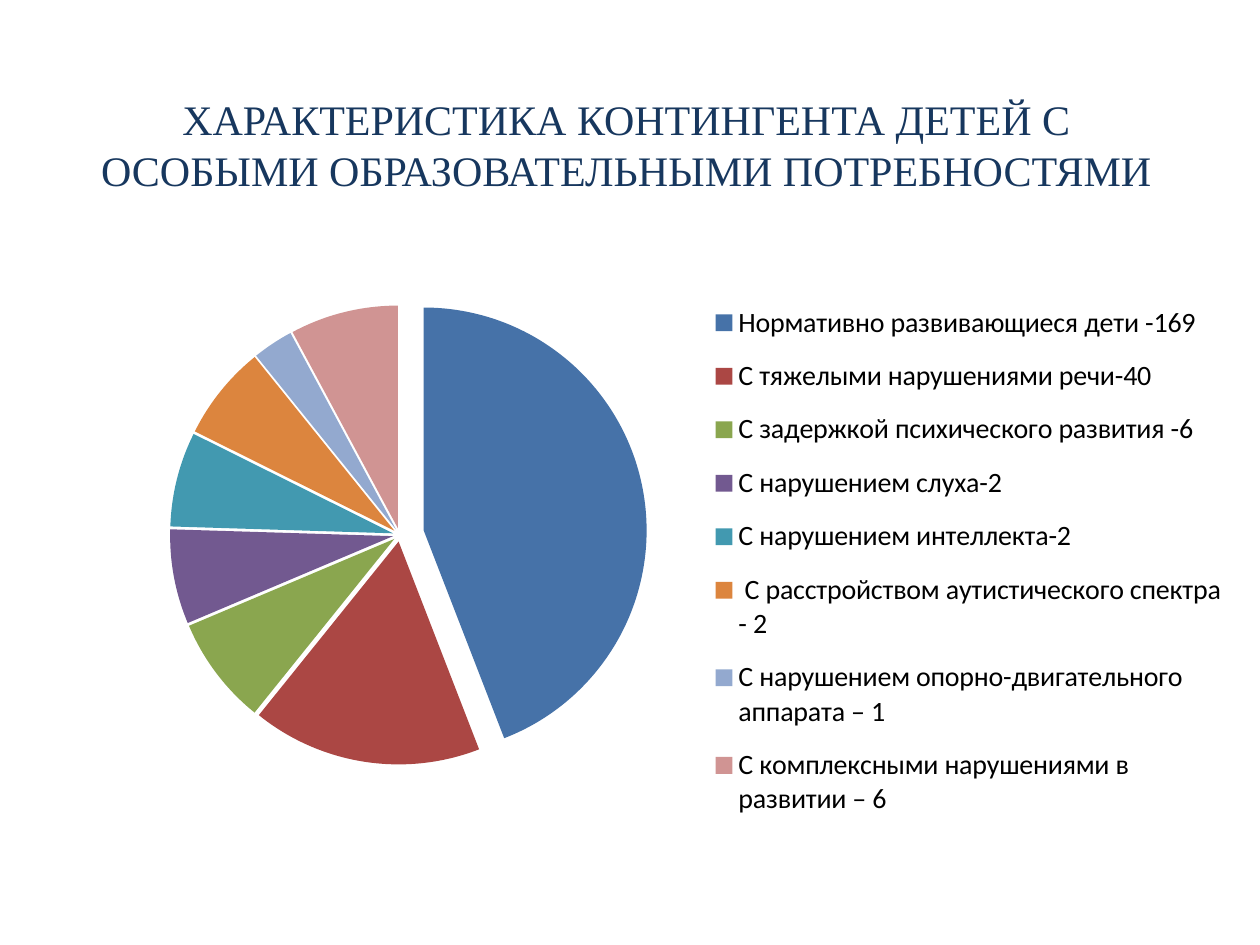
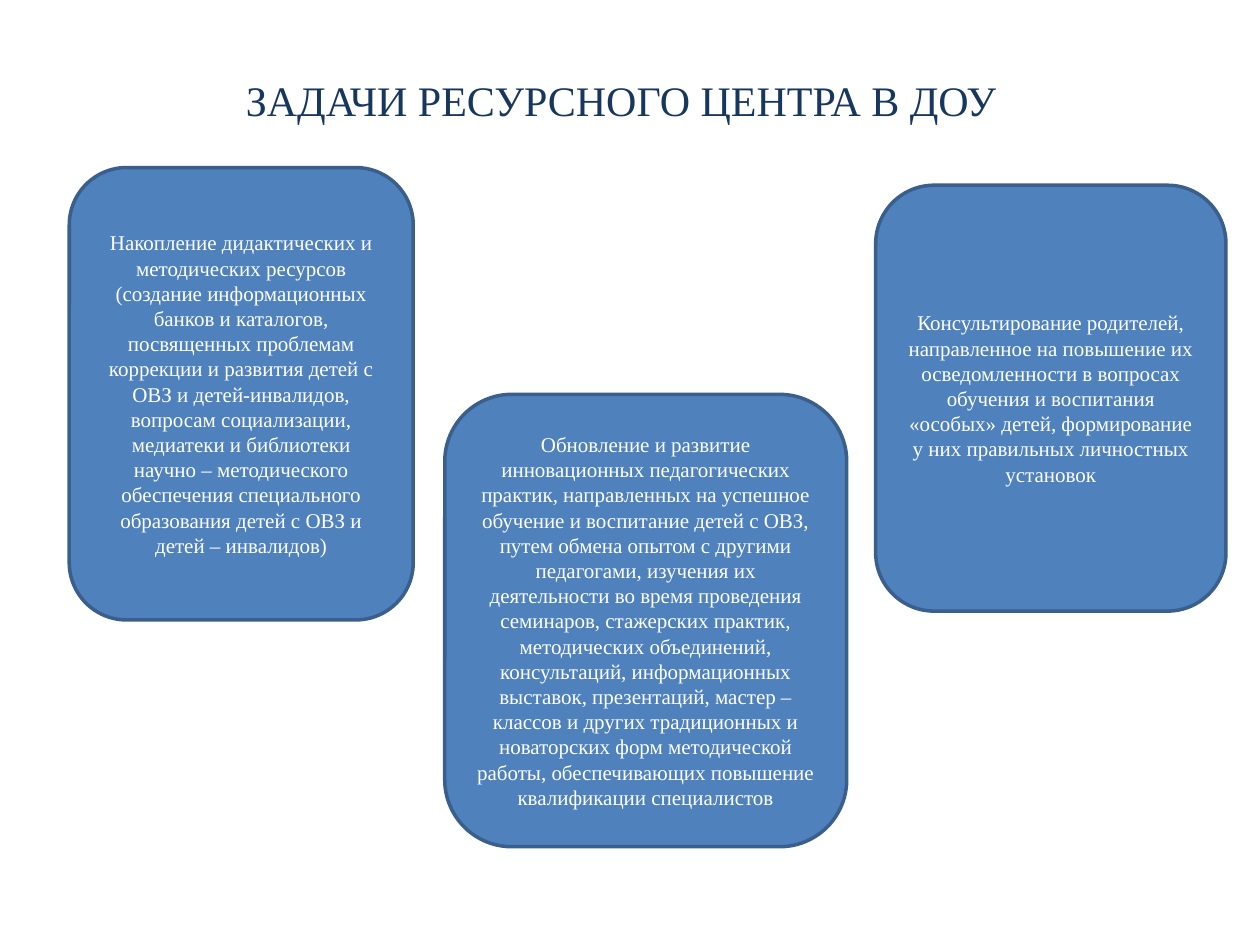
from lxml import etree
from pptx import Presentation
from pptx.chart.data import CategoryChartData
from pptx.dml.color import RGBColor
from pptx.enum.chart import XL_CHART_TYPE, XL_LEGEND_POSITION
from pptx.enum.shapes import MSO_SHAPE
from pptx.enum.text import MSO_ANCHOR, MSO_AUTO_SIZE, PP_ALIGN
from pptx.oxml import parse_xml
from pptx.oxml.ns import nsdecls, qn
from pptx.util import Inches, Pt

# Shared style
NAVY = RGBColor(0x17, 0x37, 0x5E)
BLUE = RGBColor(0x4F, 0x81, 0xBD)
DARK_BLUE = RGBColor(0x3A, 0x5F, 0x8C)
WHITE = RGBColor(0xFF, 0xFF, 0xFF)
BLACK = RGBColor(0x00, 0x00, 0x00)
SERIF = "Times New Roman"

presentation = Presentation()
presentation.slide_width = Inches(10)
presentation.slide_height = Inches(7.5)


def write_centred(shape, text, size, color):
    frame = shape.text_frame
    frame.word_wrap = True
    frame.auto_size = MSO_AUTO_SIZE.NONE
    frame.vertical_anchor = MSO_ANCHOR.MIDDLE
    paragraph = frame.paragraphs[0]
    paragraph.alignment = PP_ALIGN.CENTER
    run = paragraph.add_run()
    run.text = text
    run.font.name = SERIF
    run.font.size = Pt(size)
    run.font.color.rgb = color


def add_titled_slide(text, left, top):
    slide = presentation.slides.add_slide(presentation.slide_layouts[5])
    title = slide.shapes.title
    title.left, title.top = Inches(left), Inches(top)
    title.width, title.height = Inches(9), Inches(1.25)
    write_centred(title, text, 24, NAVY)
    title.text_frame.margin_bottom = Inches(0.25)
    return slide


# Slide 1: pie chart of the children
slide = add_titled_slide(
    "ХАРАКТЕРИСТИКА КОНТИНГЕНТА ДЕТЕЙ С ОСОБЫМИ ОБРАЗОВАТЕЛЬНЫМИ ПОТРЕБНОСТЯМИ", 0.47, 0.62)

groups = [
    ("Нормативно развивающиеся дети -169", 45, "4672A8"),
    ("С тяжелыми нарушениями речи-40", 17, "AB4744"),
    ("С задержкой психического развития -6", 8, "8AA64F"),
    ("С нарушением слуха-2", 7, "725990"),
    ("С нарушением интеллекта-2", 7, "4299B0"),
    (" С расстройством аутистического спектра - 2", 7, "DC853E"),
    ("С нарушением опорно-двигательного аппарата – 1", 3, "93A9CF"),
    ("С комплексными нарушениями в развитии – 6", 8, "D09493"),
]
chart_data = CategoryChartData()
chart_data.categories = [name for name, value, color in groups]
chart_data.add_series("Series 1", [value for name, value, color in groups])
chart = slide.shapes.add_chart(
    XL_CHART_TYPE.PIE, Inches(0.86), Inches(2.11), Inches(8.98), Inches(4.69), chart_data).chart
chart.has_title = False
chart.font.name = "Calibri"
chart.font.size = Pt(18)
chart.font.color.rgb = BLACK
chart.has_legend = True
legend = chart.legend
legend.position = XL_LEGEND_POSITION.RIGHT
legend.include_in_layout = False
legend.font.name = "Calibri"
legend.font.size = Pt(16)
legend.font.color.rgb = BLACK

# Slice colours, with the first slice pulled out furthest
plot = chart.plots[0]
plot.vary_by_categories = True
series = plot.series[0]
for index, (name, value, color) in enumerate(groups):
    fill = series.points[index].format.fill
    fill.solid()
    fill.fore_color.rgb = RGBColor.from_string(color)
series_element = series._element
first_point = series_element.find(qn("c:dPt"))
for anchor, amount in ((series_element.find(qn("c:tx")), 3), (first_point.find(qn("c:idx")), 11)):
    explosion = etree.Element(qn("c:explosion"))
    explosion.set("val", str(amount))
    anchor.addnext(explosion)

# Places of the pie and the legend, as fractions of the chart
layouts = [
    (chart._chartSpace.chart.plotArea, '<c:layoutTarget val="inner"/>', (0, 0.067, 0.515, 0.777)),
    (legend._element, "", (0.55, 0.035, 0.45, 0.93)),
]
for parent, target, (x, y, width, height) in layouts:
    for old_layout in parent.findall(qn("c:layout")):
        parent.remove(old_layout)
    layout = parse_xml(
        f'<c:layout {nsdecls("c")}><c:manualLayout>{target}'
        '<c:xMode val="edge"/><c:yMode val="edge"/>'
        f'<c:x val="{x}"/><c:y val="{y}"/><c:w val="{width}"/><c:h val="{height}"/>'
        "</c:manualLayout></c:layout>")
    position = parent.find(qn("c:legendPos"))
    if position is None:
        parent.insert(0, layout)
    else:
        position.addnext(layout)

# Slide 2: tasks of the resource centre
slide = add_titled_slide("ЗАДАЧИ РЕСУРСНОГО ЦЕНТРА В ДОУ", 0.43, 0.27)

tasks = [
    ((0.55, 1.33, 2.73, 3.59),
     "Накопление дидактических и методических ресурсов (создание информационных банков и каталогов, "
     "посвященных проблемам коррекции и развития детей с ОВЗ и детей-инвалидов, вопросам социализации, "
     "медиатеки и библиотеки научно – методического обеспечения специального образования детей с ОВЗ "
     "и детей – инвалидов)"),
    ((3.53, 3.13, 3.19, 3.59),
     "Обновление и развитие инновационных педагогических практик, направленных на успешное обучение "
     "и воспитание детей с ОВЗ, путем обмена опытом с другими педагогами, изучения их деятельности "
     "во время проведения семинаров, стажерских практик, методических объединений, консультаций, "
     "информационных выставок, презентаций, мастер – классов и других традиционных и новаторских форм "
     "методической работы, обеспечивающих повышение квалификации специалистов"),
    ((6.95, 1.47, 2.78, 3.38),
     "Консультирование родителей, направленное на повышение их осведомленности в вопросах обучения "
     "и воспитания «особых» детей, формирование у них правильных личностных установок"),
]
for box, text in tasks:
    shape = slide.shapes.add_shape(MSO_SHAPE.ROUNDED_RECTANGLE, *map(Inches, box))
    shape.shadow.inherit = False
    shape.fill.solid()
    shape.fill.fore_color.rgb = BLUE
    shape.line.color.rgb = DARK_BLUE
    shape.line.width = Pt(2)
    write_centred(shape, text, 12, WHITE)

presentation.save("out.pptx")
